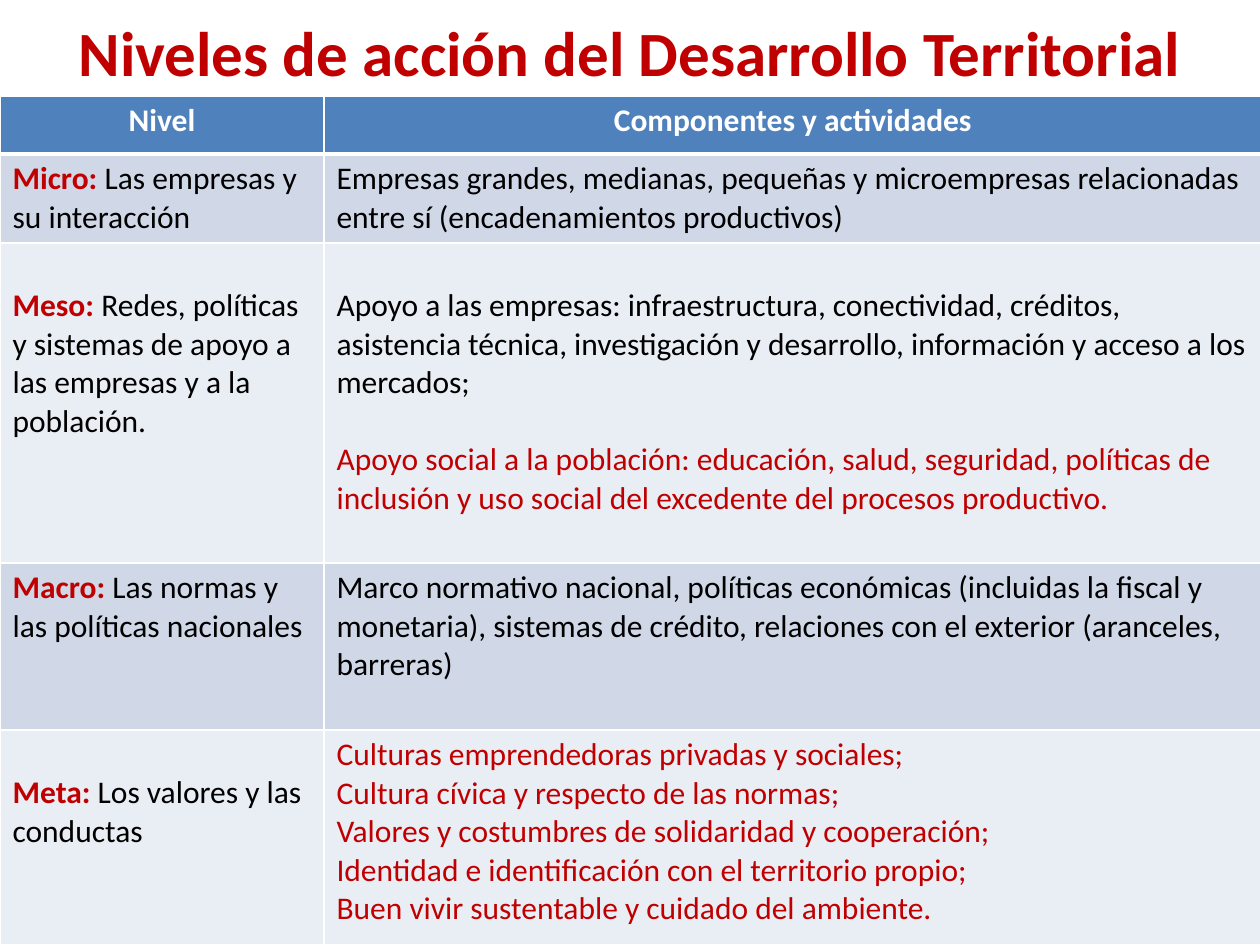
from lxml import etree
from pptx import Presentation
from pptx import util as u
from pptx.dml.color import RGBColor
from pptx.enum import text
from pptx.oxml import ns

SCALE = 914400 / 126
FONT = "Calibri"
RED = RGBColor(0xC0, 0x00, 0x00)
BLACK = RGBColor(0x00, 0x00, 0x00)
WHITE = RGBColor(0xFF, 0xFF, 0xFF)
HEADER = RGBColor(0x4F, 0x81, 0xBD)
BANDS = (RGBColor(0xD0, 0xD8, 0xE8), RGBColor(0xE9, 0xED, 0xF4))
COLUMN_WIDTHS = (324, 938)
ROW_HEIGHTS = (58, 89, 320, 167, 215)
CELL_TOP = 6
LINE_HEIGHT = 38

HEADINGS = ("Nivel", "Componentes y actividades")
LEVELS = (
    ("Micro:", "Las empresas y su interacción", 0,
     [("Empresas grandes, medianas, pequeñas y microempresas relacionadas "
       "entre sí (encadenamientos productivos)", BLACK)], 0),
    ("Meso:", "Redes, políticas y sistemas de apoyo a las empresas y a la población.", 1,
     [("Apoyo a las empresas: infraestructura, conectividad, créditos, asistencia técnica, "
       "investigación y desarrollo, información y acceso a los mercados;", BLACK),
      ("Apoyo social a la población: educación, salud, seguridad, políticas de inclusión "
       "y uso social del excedente del procesos productivo.", RED)], 1),
    ("Macro:", "Las normas y las políticas nacionales", 0,
     [("Marco normativo nacional, políticas económicas (incluidas la fiscal y monetaria), "
       "sistemas de crédito, relaciones con el exterior (aranceles, barreras)", BLACK)], 0),
    ("Meta:", "Los valores y las conductas", 1,
     [("Culturas emprendedoras privadas y sociales;", RED),
      ("Cultura cívica y respecto de las normas;", RED),
      ("Valores y costumbres de solidaridad y cooperación;", RED),
      ("Identidad e identificación con el territorio propio;", RED),
      ("Buen vivir sustentable y cuidado del ambiente.", RED)], 0),
)


def px(length):
    return u.Emu(round(length * SCALE))


def add_run(paragraph, words, size=18, color=BLACK, bold=False):
    run = paragraph.add_run()
    run.text = words
    run.font.name = FONT
    run.font.size = u.Pt(size)
    run.font.bold = bold
    run.font.color.rgb = color


def add_title(slide, words):
    shape = slide.shapes.add_textbox(px(63), px(16), px(1134), px(70))
    frame = shape.text_frame
    frame.word_wrap = True
    frame.vertical_anchor = text.MSO_ANCHOR.MIDDLE
    paragraph = frame.paragraphs[0]
    paragraph.alignment = text.PP_ALIGN.CENTER
    add_run(paragraph, words, size=36, color=RED, bold=True)


def set_borders(cell, **widths):
    properties = cell._tc.get_or_add_tcPr()
    for position, side in enumerate("LRTB"):
        line = etree.Element(ns.qn(f"a:ln{side}"), w=str(u.Pt(widths.get(side, 1))))
        fill = etree.SubElement(line, ns.qn("a:solidFill"))
        etree.SubElement(fill, ns.qn("a:srgbClr"), val=str(WHITE))
        properties.insert(position, line)


def style_cell(cell, color, lines_above=0, **borders):
    cell.fill.solid()
    cell.fill.fore_color.rgb = color
    cell.margin_top = px(CELL_TOP + lines_above * LINE_HEIGHT)
    set_borders(cell, **borders)


def fill_header(table):
    for column, heading in enumerate(HEADINGS):
        cell = table.cell(0, column)
        style_cell(cell, HEADER, B=3)
        paragraph = cell.text_frame.paragraphs[0]
        paragraph.alignment = text.PP_ALIGN.CENTER
        add_run(paragraph, heading, color=WHITE, bold=True)


def fill_level(table, row, level):
    name, summary, lines_above, activities, gap_lines = level
    color = BANDS[(row - 1) % 2]
    top_line = {"T": 3} if row == 1 else {}
    name_cell, activity_cell = table.cell(row, 0), table.cell(row, 1)

    style_cell(name_cell, color, lines_above, **top_line)
    paragraph = name_cell.text_frame.paragraphs[0]
    add_run(paragraph, name, color=RED, bold=True)
    add_run(paragraph, " " + summary)

    style_cell(activity_cell, color, gap_lines, **top_line)
    frame = activity_cell.text_frame
    for index, (words, word_color) in enumerate(activities):
        paragraph = frame.add_paragraph() if index else frame.paragraphs[0]
        if index and gap_lines:
            paragraph.space_before = u.Pt(22 * gap_lines)
        add_run(paragraph, words, color=word_color)


def add_levels_table(slide):
    frame = slide.shapes.add_table(
        len(ROW_HEIGHTS), len(COLUMN_WIDTHS), px(0), px(96),
        px(sum(COLUMN_WIDTHS)), px(sum(ROW_HEIGHTS)))
    table = frame.table
    for column, width in zip(table.columns, COLUMN_WIDTHS):
        column.width = px(width)
    for row, height in zip(table.rows, ROW_HEIGHTS):
        row.height = px(height)
    fill_header(table)
    for row, level in enumerate(LEVELS, start=1):
        fill_level(table, row, level)


def main():
    presentation = Presentation()
    presentation.slide_width = px(1260)
    presentation.slide_height = px(945)
    slide = presentation.slides.add_slide(presentation.slide_layouts[6])
    add_title(slide, "Niveles de acción del Desarrollo Territorial")
    add_levels_table(slide)
    presentation.save("out.pptx")


if __name__ == "__main__":
    main()
